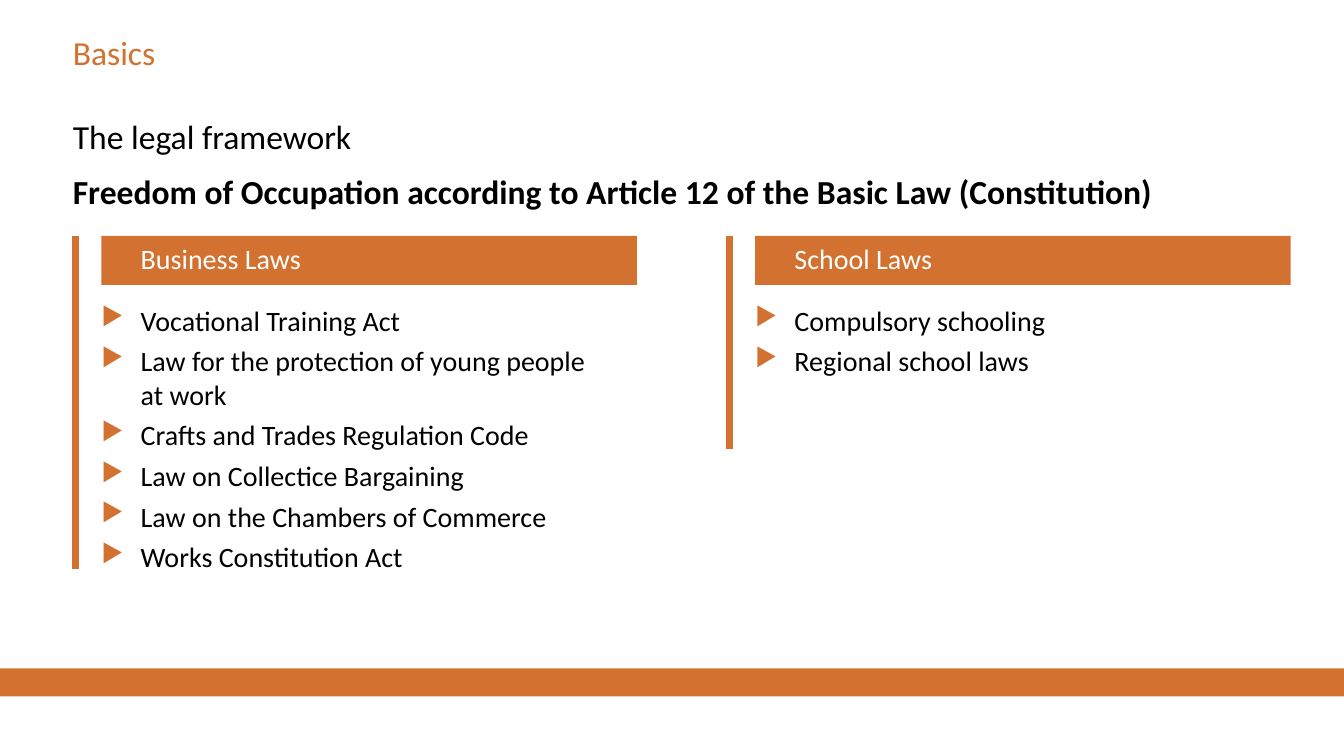
from lxml.etree import SubElement
from pptx import Presentation
from pptx.dml.color import RGBColor
from pptx.enum.shapes import MSO_CONNECTOR as Connector, MSO_SHAPE as Shape
from pptx.enum.text import MSO_ANCHOR as Anchor, PP_ALIGN as Align
from pptx.oxml.ns import qn
from pptx.util import Pt

ORANGE = RGBColor(0xD3, 0x72, 0x30)
BLACK = RGBColor(0, 0, 0)
WHITE = RGBColor(0xFF, 0xFF, 0xFF)

SLIDE_WIDTH, SLIDE_HEIGHT = 960, 540
MARGIN = 52
INDENT = 28
COLUMN_TOP = 168.5
COLUMN_STEP = 467
COLUMN_WIDTH = 382.5
HEADER_OFFSET = 20.5
RULE_OFFSET = 2

COLUMNS = [
    ("Business Laws", 238, [
        "Vocational Training Act",
        "Law for the protection of young people\vat work",
        "Crafts and Trades Regulation Code",
        "Law on Collectice Bargaining",
        "Law on the Chambers of Commerce",
        "Works Constitution Act",
    ]),
    ("School Laws", 152.5, ["Compulsory schooling", "Regional school laws"]),
]


class SlideBuilder:
    def __init__(self, slide, font_name):
        self.slide = slide
        self.font_name = font_name

    def fill_text(self, shape, texts, formats, space=0, inset=0, anchor=Anchor.TOP, bullets=False):
        """Fill a shape with one paragraph per text, each with its own font format."""
        frame = shape.text_frame
        settings = {"word_wrap": True, "vertical_anchor": anchor, "margin_left": Pt(inset),
                    "margin_top": 0, "margin_right": 0, "margin_bottom": 0}
        for name, value in settings.items():
            setattr(frame, name, value)
        for index, (text, style) in enumerate(zip(texts, formats)):
            paragraph = frame.add_paragraph() if index else frame.paragraphs[0]
            paragraph.text = text
            paragraph.alignment = Align.LEFT
            paragraph.space_before = Pt(space if index else 0)
            if bullets:
                self.add_bullet(paragraph)
            for run in paragraph.runs:
                self.format_font(run.font, style)

    def format_font(self, font, style):
        font.color.rgb = style["color"]
        values = {"name": self.font_name, "size": Pt(style["size"]), "bold": style.get("bold", False)}
        for name, value in values.items():
            setattr(font, name, value)

    def add_bullet(self, paragraph):
        properties = paragraph._p.get_or_add_pPr()
        properties.set("marL", str(Pt(INDENT)))
        properties.set("indent", str(-Pt(INDENT)))
        color = SubElement(properties, qn("a:buClr"))
        SubElement(color, qn("a:srgbClr"), val=str(ORANGE))
        SubElement(properties, qn("a:buSzPct"), val="90000")
        SubElement(properties, qn("a:buChar"), char="▶")

    def title(self, text, left, top, width, height, style):
        shape = self.slide.shapes.title
        box = {"left": left, "top": top, "width": width, "height": height}
        for name, value in box.items():
            setattr(shape, name, Pt(value))
        self.fill_text(shape, [text], [style])

    def text(self, texts, left, top, width, height, formats, **options):
        shape = self.slide.shapes.add_textbox(Pt(left), Pt(top), Pt(width), Pt(height))
        self.fill_text(shape, texts, formats, **options)

    def bar(self, left, top, width, height):
        shape = self.slide.shapes.add_shape(Shape.RECTANGLE, Pt(left), Pt(top), Pt(width), Pt(height))
        shape.shadow.inherit = False
        shape.fill.solid()
        shape.fill.fore_color.rgb = ORANGE
        shape.line.fill.background()
        return shape

    def vertical_rule(self, x, top, height):
        rule = self.slide.shapes.add_connector(Connector.STRAIGHT, Pt(x), Pt(top), Pt(x), Pt(top + height))
        rule.line.color.rgb = ORANGE
        rule.line.width = Pt(4.5)
        SubElement(rule._element.spPr, qn("a:effectLst"))

    def column(self, left, heading, rule_height, items):
        """Draw a rule, a heading bar and the bullet list below it."""
        header_left = left + HEADER_OFFSET
        header = self.bar(header_left, COLUMN_TOP, COLUMN_WIDTH, 35)
        self.fill_text(header, [heading], [{"size": 20, "color": WHITE}], inset=INDENT, anchor=Anchor.MIDDLE)
        header.text_frame.paragraphs[0].line_spacing = 0.9
        self.text(items, header_left, 216.5, COLUMN_WIDTH, 206,
                  [{"size": 20, "color": BLACK}] * len(items), space=5, bullets=True)
        self.vertical_rule(left + RULE_OFFSET, COLUMN_TOP, rule_height)


def main():
    presentation = Presentation()
    presentation.slide_width = Pt(SLIDE_WIDTH)
    presentation.slide_height = Pt(SLIDE_HEIGHT)
    builder = SlideBuilder(presentation.slides.add_slide(presentation.slide_layouts[5]), "Calibri")

    builder.bar(0, 477.5, SLIDE_WIDTH, 20)
    builder.title("Basics", MARGIN, 23, 708.5, 35, {"size": 24, "color": ORANGE})
    subtitle = {"size": 24, "color": BLACK}
    builder.text(
        ["The legal framework",
         "Freedom of Occupation according to Article 12 of the Basic Law (Constitution)"],
        MARGIN, 83, 870.5, 79, [subtitle, {**subtitle, "bold": True}], space=10)
    for index, (heading, rule_height, items) in enumerate(COLUMNS):
        builder.column(MARGIN + index * COLUMN_STEP, heading, rule_height, items)

    presentation.save("out.pptx")


if __name__ == "__main__":
    main()
